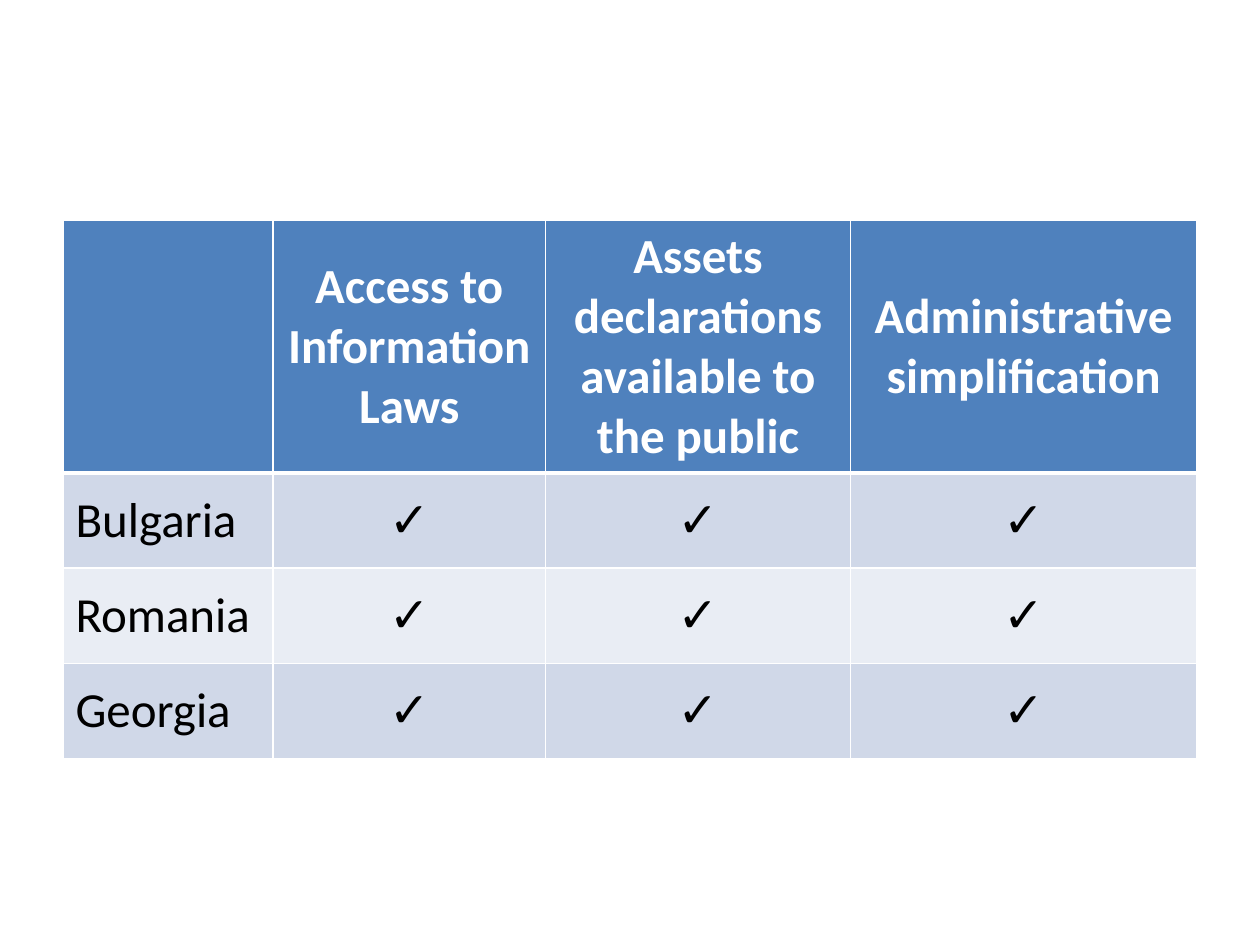
from lxml.etree import SubElement
from pptx import Presentation
from pptx.dml.color import RGBColor
from pptx.enum.text import MSO_ANCHOR, PP_ALIGN
from pptx.oxml.ns import qn
from pptx.util import Cm, Pt

WHITE = RGBColor(0xFF, 0xFF, 0xFF)
BLACK = RGBColor(0x00, 0x00, 0x00)
HEADER_BLUE = RGBColor(0x4F, 0x81, 0xBD)
BANDS = (RGBColor(0xD0, 0xD8, 0xE8), RGBColor(0xE9, 0xED, 0xF4))

CHECK = "✓"
MEASURES = [
    "Access to Information Laws",
    "Assets declarations available to the public",
    "Administrative simplification",
]
COUNTRIES = ["Bulgaria", "Romania", "Georgia"]
COLUMN_WIDTHS = [4.23, 5.5, 6.14, 6.99]
ROW_HEIGHTS = [4.88] + [1.92] * len(COUNTRIES)

BODY_FONT = {"name": "Calibri", "size": Pt(28), "bold": False}
HEADER_FONT = {**BODY_FONT, "bold": True}


def set_borders(cell, widths):
    """Draw white borders; widths maps left, right, top, bottom tags to points."""
    properties = cell._tc.get_or_add_tcPr()
    for tag, width in widths.items():
        line = SubElement(properties, qn(f"a:{tag}"), w=str(Pt(width)))
        fill = SubElement(line, qn("a:solidFill"))
        SubElement(fill, qn("a:srgbClr"), val=str(WHITE))


def write_text(cell, text, alignment, font_format, colour):
    paragraph = cell.text_frame.paragraphs[0]
    paragraph.alignment = alignment
    run = paragraph.add_run()
    run.text = text
    for attribute, value in font_format.items():
        setattr(run.font, attribute, value)
    run.font.color.rgb = colour


def format_cell(cell, text, row, column):
    is_header = row == 0
    set_borders(cell, {
        "lnL": 1,
        "lnR": 1,
        "lnT": 3 if row == 1 else 1,
        "lnB": 3 if is_header else 1,
    })
    cell.fill.solid()
    cell.fill.fore_color.rgb = HEADER_BLUE if is_header else BANDS[(row - 1) % 2]
    cell.vertical_anchor = MSO_ANCHOR.MIDDLE
    if text:
        write_text(
            cell,
            text,
            PP_ALIGN.CENTER if column else PP_ALIGN.LEFT,
            HEADER_FONT if is_header else BODY_FONT,
            WHITE if is_header else BLACK,
        )


def add_reform_table(slide):
    rows = [["", *MEASURES]]
    rows += [[country] + [CHECK] * len(MEASURES) for country in COUNTRIES]
    table = slide.shapes.add_table(
        len(rows), len(COLUMN_WIDTHS), Cm(1.27), Cm(4.45),
        Cm(sum(COLUMN_WIDTHS)), Cm(sum(ROW_HEIGHTS)),
    ).table
    for column, width in zip(table.columns, COLUMN_WIDTHS):
        column.width = Cm(width)
    for row, height in zip(table.rows, ROW_HEIGHTS):
        row.height = Cm(height)
    for row, texts in enumerate(rows):
        for column, text in enumerate(texts):
            format_cell(table.cell(row, column), text, row, column)


def main():
    presentation = Presentation()
    presentation.slide_width = Cm(25.4)
    presentation.slide_height = Cm(19.05)
    slide = presentation.slides.add_slide(presentation.slide_layouts[6])
    add_reform_table(slide)
    presentation.save("out.pptx")


if __name__ == "__main__":
    main()
